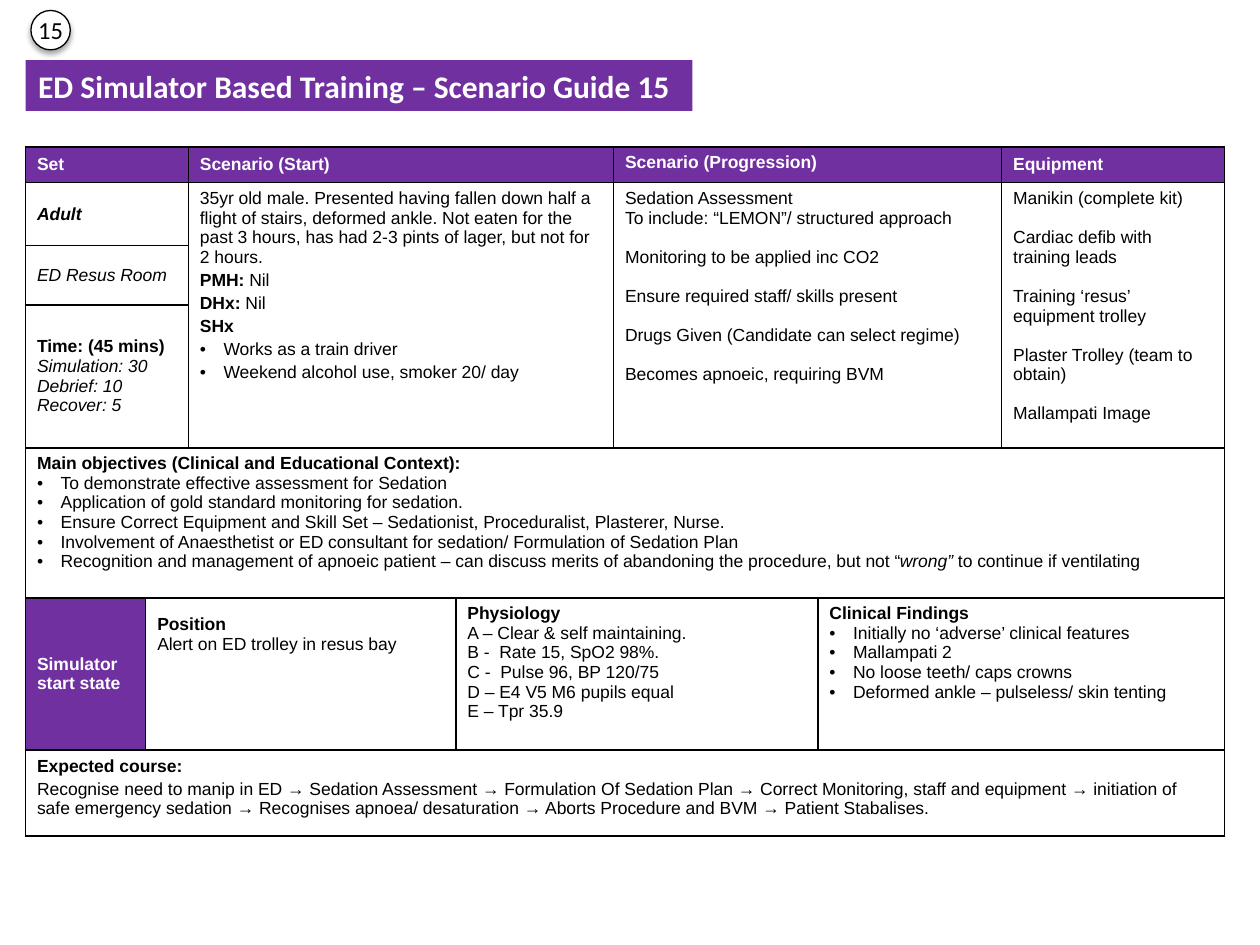
from dataclasses import dataclass

from lxml.etree import SubElement
from pptx import Presentation
from pptx.dml.color import RGBColor
from pptx.enum.shapes import MSO_SHAPE
from pptx.enum.text import MSO_ANCHOR as Anchor, MSO_AUTO_SIZE as AutoSize, PP_ALIGN as Align
from pptx.oxml.ns import qn
from pptx.util import Pt


@dataclass(frozen=True)
class Theme:
    purple: RGBColor = RGBColor(0x70, 0x30, 0xA0)
    white: RGBColor = RGBColor(0xFF, 0xFF, 0xFF)
    black: RGBColor = RGBColor(0, 0, 0)
    body_font: str = "Arial"
    title_font: str = "Calibri"
    body_size: float = 10
    title_size: float = 18
    badge_size: float = 14


@dataclass(frozen=True)
class Span:
    text: str
    bold: bool = False
    italic: bool = False


@dataclass(frozen=True)
class Para:
    spans: tuple[Span, ...]
    bullet: bool = False
    before: float = 0


@dataclass(frozen=True)
class Block:
    row: int
    col: int
    paras: list[Para]
    rows: int = 1
    cols: int = 1
    purple: bool = False
    anchor: Anchor = Anchor.TOP
    inset_top: float = 3.6


THEME = Theme()
TABLE_LEFT, TABLE_TOP = 14.6, 83.9
COL_WIDTHS = [68.7, 24.4, 152.9, 90.1, 116.8, 105, 127.4]
ROW_HEIGHTS = [20.5, 36, 33.8, 81.7, 85.7, 87.1, 49]
SIDE_INSET, END_INSET = 6.6, 3.6
BULLET_INDENT = 13.5
LINE_GAP = 11.2
SMALL_GAP = 2


def plain(text: str, before: float = 0) -> Para:
    return Para((Span(text),), before=before)


def bold(text: str, italic: bool = False) -> Para:
    return Para((Span(text, True, italic),))


def italic(text: str) -> Para:
    return Para((Span(text, italic=True),))


def bullets(*texts: str, before: float = 0) -> list[Para]:
    return [Para((Span(text),), True, before) for text in texts]


def spaced(*texts: str) -> list[Para]:
    """Paragraphs set one line apart."""
    return [plain(text, LINE_GAP if i else 0) for i, text in enumerate(texts)]


def history(label: str, answer: str) -> Para:
    return Para((Span(label, bold=True), Span(answer)), before=SMALL_GAP)


def header(col: int, text: str, cols: int = 2, anchor: Anchor = Anchor.MIDDLE) -> Block:
    return Block(0, col, [bold(text)], cols=cols, purple=True, anchor=anchor)


BLOCKS = [
    header(0, "Set"),
    header(2, "Scenario (Start)"),
    header(4, "Scenario (Progression)", anchor=Anchor.TOP),
    header(6, "Equipment", cols=1),
    Block(1, 0, [bold("Adult", italic=True)], cols=2, anchor=Anchor.MIDDLE),
    Block(2, 0, [italic("ED Resus Room")], cols=2, anchor=Anchor.MIDDLE),
    Block(3, 0, [bold("Time: (45 mins)"), italic("Simulation: 30 Debrief: 10"),
                 italic("Recover: 5")], cols=2, anchor=Anchor.MIDDLE),
    Block(1, 2, [
        plain("35yr old male. Presented having fallen down half a flight of stairs, deformed "
              "ankle. Not eaten for the past 3 hours, has had 2-3 pints of lager, but not for "
              "2 hours."),
        history("PMH: ", "Nil"),
        history("DHx: ", "Nil"),
        Para((Span("SHx", bold=True),), before=SMALL_GAP),
        *bullets("Works as a train driver", "Weekend alcohol use, smoker 20/ day",
                 before=SMALL_GAP),
    ], rows=3, cols=2),
    Block(1, 4, [
        plain("Sedation Assessment"),
        plain("To include: “LEMON”/ structured approach"),
        *[plain(step, LINE_GAP) for step in (
            "Monitoring to be applied inc CO2",
            "Ensure required staff/ skills present",
            "Drugs Given (Candidate can select regime)",
            "Becomes apnoeic, requiring BVM",
        )],
    ], rows=3, cols=2),
    Block(1, 6, spaced(
        "Manikin (complete kit)",
        "Cardiac defib with training leads",
        "Training ‘resus’ equipment trolley",
        "Plaster Trolley (team to obtain)",
        "Mallampati Image",
    ), rows=3),
    Block(4, 0, [
        bold("Main objectives (Clinical and Educational Context):"),
        *bullets(
            "To demonstrate effective assessment for Sedation",
            "Application of gold standard monitoring for sedation.",
            "Ensure Correct Equipment and Skill Set – Sedationist, Proceduralist, Plasterer, Nurse.",
            "Involvement of Anaesthetist or ED consultant for sedation/ Formulation of Sedation Plan",
        ),
        Para((Span("Recognition and management of apnoeic patient – can discuss merits of "
                   "abandoning the procedure, but not “"),
              Span("wrong”", italic=True), Span(" to continue if ventilating")), bullet=True),
    ], cols=7),
    Block(5, 0, [bold("Simulator"), bold("start state")], purple=True, anchor=Anchor.MIDDLE),
    Block(5, 1, [bold("Position"), plain("Alert on ED trolley in resus bay")],
          cols=2, inset_top=10),
    Block(5, 3, [
        bold("Physiology"),
        *map(plain, (
            "A – Clear & self maintaining.",
            "B -  Rate 15, SpO2 98%.",
            "C -  Pulse 96, BP 120/75",
            "D – E4 V5 M6 pupils equal",
            "E – Tpr 35.9",
        )),
    ], cols=2),
    Block(5, 5, [
        bold("Clinical Findings"),
        *bullets("Initially no ‘adverse’ clinical features", "Mallampati 2",
                 "No loose teeth/ caps crowns", "Deformed ankle – pulseless/ skin tenting"),
    ], cols=2),
    Block(6, 0, [
        bold("Expected course:"),
        plain("Recognise need to manip in ED → Sedation Assessment → Formulation Of Sedation "
              "Plan → Correct Monitoring, staff and equipment → initiation of safe emergency "
              "sedation → Recognises apnoea/ desaturation → Aborts Procedure and BVM → Patient "
              "Stabalises.", SMALL_GAP),
    ], cols=7),
]


def style_font(font, name: str, size: float, color: RGBColor, bold: bool = False) -> None:
    font.name, font.size, font.bold = name, Pt(size), bold
    font.color.rgb = color


def add_borders(cell) -> None:
    properties = cell._tc.get_or_add_tcPr()
    for side in ("a:lnL", "a:lnR", "a:lnT", "a:lnB"):
        line = SubElement(properties, qn(side), w=str(Pt(1)))
        SubElement(SubElement(line, qn("a:solidFill")), qn("a:srgbClr"), val=str(THEME.black))


def write_para(paragraph, content: Para, color: RGBColor) -> None:
    if content.bullet:
        properties = paragraph._p.get_or_add_pPr()
        properties.set("marL", str(Pt(BULLET_INDENT)))
        properties.set("indent", str(-Pt(BULLET_INDENT)))
        SubElement(properties, qn("a:buFont"), typeface=THEME.body_font)
        SubElement(properties, qn("a:buChar"), char="•")
    paragraph.space_before = Pt(content.before)
    for span in content.spans:
        run = paragraph.add_run()
        run.text = span.text
        style_font(run.font, THEME.body_font, THEME.body_size, color, span.bold)
        run.font.italic = span.italic


def fill_block(table, block: Block) -> None:
    cell = table.cell(block.row, block.col)
    if block.rows * block.cols > 1:
        cell.merge(table.cell(block.row + block.rows - 1, block.col + block.cols - 1))
    cell.fill.solid()
    cell.fill.fore_color.rgb = THEME.purple if block.purple else THEME.white
    cell.vertical_anchor = block.anchor
    cell.margin_left = cell.margin_right = Pt(SIDE_INSET)
    cell.margin_top, cell.margin_bottom = Pt(block.inset_top), Pt(END_INSET)
    frame = cell.text_frame
    for i, content in enumerate(block.paras):
        paragraph = frame.add_paragraph() if i else frame.paragraphs[0]
        write_para(paragraph, content, THEME.white if block.purple else THEME.black)


def add_guide_table(slide) -> None:
    table = slide.shapes.add_table(
        len(ROW_HEIGHTS), len(COL_WIDTHS), Pt(TABLE_LEFT), Pt(TABLE_TOP),
        Pt(sum(COL_WIDTHS)), Pt(sum(ROW_HEIGHTS))).table
    table.first_row = table.horz_banding = False
    for column, width in zip(table.columns, COL_WIDTHS):
        column.width = Pt(width)
    for row, height in zip(table.rows, ROW_HEIGHTS):
        row.height = Pt(height)
    for cell in table.iter_cells():
        add_borders(cell)
    for block in BLOCKS:
        fill_block(table, block)


def format_title(title) -> None:
    title.left, title.top, title.width, title.height = Pt(14.6), Pt(34.4), Pt(381), Pt(29)
    title.fill.solid()
    title.fill.fore_color.rgb = THEME.purple
    frame = title.text_frame
    frame.text = "ED Simulator Based Training – Scenario Guide 15"
    frame.auto_size, frame.word_wrap = AutoSize.NONE, True
    frame.vertical_anchor = Anchor.MIDDLE
    heading = frame.paragraphs[0]
    heading.alignment = Align.LEFT
    style_font(heading.runs[0].font, THEME.title_font, THEME.title_size, THEME.white, True)


def add_number_badge(slide) -> None:
    badge = slide.shapes.add_group_shape().shapes
    disc = badge.add_shape(MSO_SHAPE.OVAL, Pt(17.7), Pt(6), Pt(22.5), Pt(22.5))
    disc.fill.solid()
    disc.fill.fore_color.rgb = THEME.white
    disc.line.color.rgb, disc.line.width = THEME.black, Pt(0.75)
    disc.shadow.inherit = False
    effects = disc._element.spPr.find(qn("a:effectLst"))
    shadow = SubElement(effects, qn("a:outerShdw"), blurRad=str(Pt(3.1)), dist=str(Pt(1.8)),
                        dir="5400000", rotWithShape="0")
    tint = SubElement(shadow, qn("a:srgbClr"), val=str(THEME.black))
    SubElement(tint, qn("a:alpha"), val="35000")

    number = badge.add_textbox(Pt(14.4), Pt(5), Pt(29), Pt(24.5))
    number.text_frame.text = "15"
    number.text_frame.word_wrap = False
    label = number.text_frame.paragraphs[0]
    label.alignment = Align.CENTER
    style_font(label.runs[0].font, THEME.title_font, THEME.badge_size, THEME.black)


def main() -> None:
    deck = Presentation()
    deck.slide_width, deck.slide_height = Pt(720), Pt(540)
    slide = deck.slides.add_slide(deck.slide_layouts[5])
    format_title(slide.shapes.title)
    add_guide_table(slide)
    add_number_badge(slide)
    deck.save("out.pptx")


if __name__ == "__main__":
    main()
